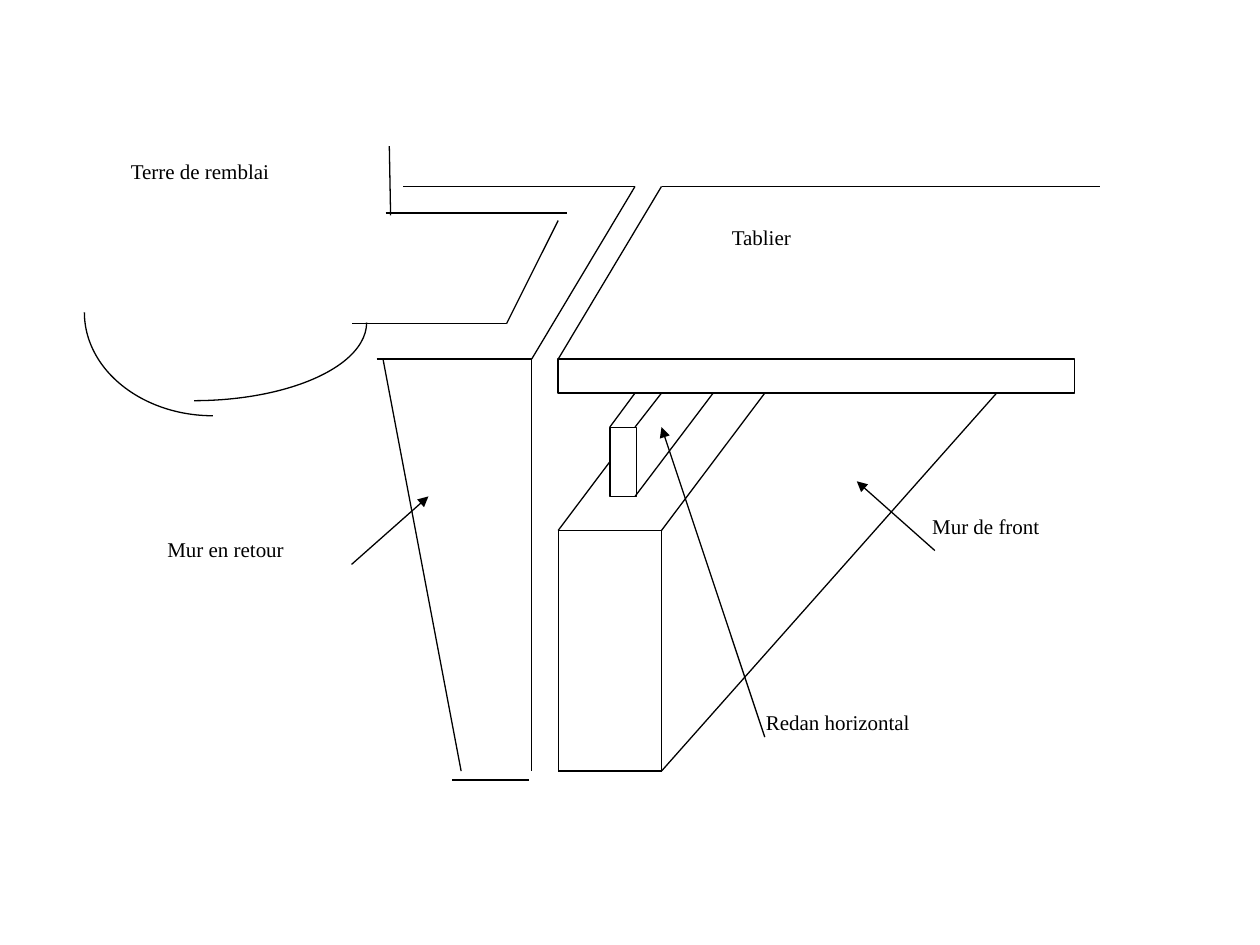
import itertools

import pptx
import pptx.dml.color
import pptx.enum.shapes
import pptx.enum.text
import pptx.oxml
import pptx.oxml.ns
import pptx.util
from pptx.util import Inches

INK = "000000"
PAPER = "FFFFFF"
FONT = "Times New Roman"
SHAPE = pptx.enum.shapes.MSO_SHAPE

DECK = (4.43, 2.85, 4.1, 0.27)
STEP = (4.84, 3.39, 0.21, 0.55)

CHAINS = [
    [(4.43, 2.85), (5.25, 1.48), (8.73, 1.48)],
    [(4.84, 3.39), (5.04, 3.12)],
    [(5.04, 3.39), (5.25, 3.12)],
    [(5.04, 3.94), (5.66, 3.12)],
    [(4.43, 4.21), (5.25, 4.21), (6.07, 3.12)],
    [(4.43, 4.21), (4.43, 6.12), (5.25, 6.12), (7.91, 3.12)],
    [(5.25, 4.21), (5.25, 6.12)],
    [(3.2, 1.48), (5.04, 1.48), (4.22, 2.85), (4.22, 6.12)],
    [(2.99, 2.85), (4.22, 2.85)],
    [(4.2, 6.19), (3.59, 6.19)],
    [(3.66, 6.12), (3.04, 2.85)],
    [(3.09, 1.16), (3.1, 1.71)],
    [(3.06, 1.69), (4.5, 1.69)],
    [(4.43, 1.75), (4.02, 2.57), (2.79, 2.57)],
]

CURVES = [
    ((1.69, 2.48), (1.02, 0.82), (90, 180)),
    ((1.54, 2.56), (1.37, 0.62), (0, 90)),
]

LABELS = [
    ("Tablier", (5.71, 1.73, 1.03, 0.82)),
    ("Terre de remblai", (0.94, 1.21, 1.44, 1)),
    ("Mur de front", (7.3, 4.03, 1.64, 0.55)),
    ("Redan horizontal", (5.98, 5.58, 2.14, 0.55)),
    ("Mur en retour", (1.23, 4.21, 1.64, 0.55)),
]

ARROWS = [
    ((2.79, 4.48), (3.4, 3.94)),
    ((6.07, 5.85), (5.25, 3.39)),
    ((7.42, 4.37), (6.8, 3.82)),
]


def paint(part, tint):
    part.rgb = pptx.dml.color.RGBColor.from_string(tint)


def stroke(item, tint=INK):
    item.line.width = pptx.util.Pt(0.75)
    item.line.fill.solid()
    paint(item.line.color, tint)


def add_rect(slide, box, edge=INK):
    rect = slide.shapes.add_shape(SHAPE.RECTANGLE, *map(Inches, box))
    rect.shadow.inherit = False
    rect.fill.solid()
    paint(rect.fill.fore_color, PAPER)
    stroke(rect, edge)
    return rect


def add_line(slide, start, end, head=False):
    line = slide.shapes.add_connector(
        pptx.enum.shapes.MSO_CONNECTOR.STRAIGHT, *map(Inches, start + end))
    stroke(line)
    if head:
        tip = pptx.oxml.parse_xml(
            "<a:tailEnd %s type='triangle'/>" % pptx.oxml.ns.nsdecls("a"))
        line.line._get_or_add_ln().append(tip)
    line._element.spPr.append(pptx.oxml.parse_xml(
        "<a:effectLst %s/>" % pptx.oxml.ns.nsdecls("a")))
    return line


def add_curve(slide, mid, radii, turns):
    (x, y), (wide, high) = mid, radii
    box = (x - wide, y - high, 2 * wide, 2 * high)
    curve = slide.shapes.add_shape(SHAPE.ARC, *map(Inches, box))
    curve.shadow.inherit = False
    curve.fill.background()
    stroke(curve)
    for place, turn in enumerate(turns):
        curve.adjustments[place] = turn * 0.6


def add_label(slide, words, box):
    frame = add_rect(slide, box, PAPER).text_frame
    frame.word_wrap = True
    frame.vertical_anchor = pptx.enum.text.MSO_ANCHOR.TOP
    para = frame.paragraphs[0]
    para.alignment = pptx.enum.text.PP_ALIGN.LEFT
    run = para.add_run()
    run.text = words
    run.font.name = FONT
    run.font.size = pptx.util.Pt(12)
    paint(run.font.color, INK)


def main():
    deck = pptx.Presentation()
    deck.slide_width = Inches(10)
    deck.slide_height = Inches(7.5)
    slide = deck.slides.add_slide(deck.slide_layouts[6])

    add_rect(slide, DECK)
    step = add_rect(slide, STEP)
    for chain in CHAINS:
        for start, end in itertools.pairwise(chain):
            add_line(slide, start, end)
    add_line(slide, (4.43, 4.21), (4.84, 3.67)).end_connect(step, 1)
    for curve in CURVES:
        add_curve(slide, *curve)
    for words, box in LABELS:
        add_label(slide, words, box)
    for start, end in ARROWS:
        add_line(slide, start, end, head=True)

    deck.save("out.pptx")


if __name__ == "__main__":
    main()
